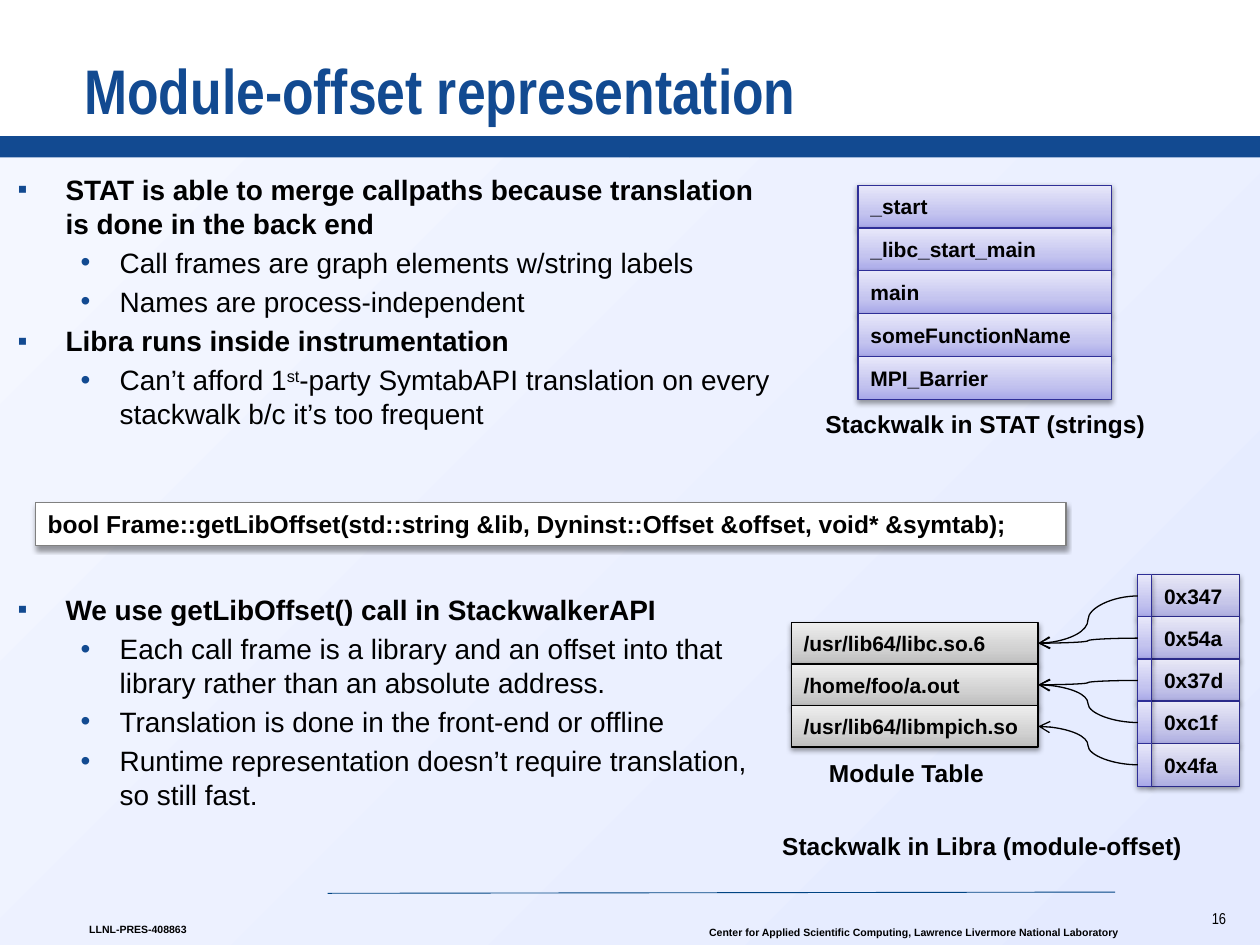
from lxml import etree
from pptx import Presentation
from pptx import util as u
from pptx.dml.color import RGBColor
from pptx.enum import shapes, text
from pptx.oxml import parse_xml
from pptx.oxml.ns import nsdecls, qn

THEME = {
    "font": "Arial", "title_font": "Arial Narrow",
    "blue": "124A91", "rule": "004483", "black": "000000",
    "white": "FFFFFF", "grey": "808080",
    "title": 36, "body": 16, "caption": 14, "cell": 12, "number": 9, "footer": 6,
    "background": [(0, "F4F7FF"), (100, "E4EAFF")],
    "violet": [(0, "A9A9E9"), (35, "C4C4EF"), (100, "E8E8FA")],
    "violet_line": "2F2F98",
    "lilac": [(0, "ADADE1"), (35, "C6C6E9"), (100, "E9E9F7")],
    "lilac_line": "2A2A89",
    "silver": [(0, "BDBDBD"), (35, "D1D1D1"), (100, "EEEEEE")],
}

presentation = Presentation()
presentation.slide_width = u.Inches(10)
presentation.slide_height = u.Inches(7.5)
slide = presentation.slides.add_slide(presentation.slide_layouts[1])


def write(frame, content, size, bold=True, color=THEME["black"], font=THEME["font"],
          align=text.PP_ALIGN.LEFT, anchor=text.MSO_ANCHOR.TOP, wrap=True,
          bullet=None, level=0, margin=0, hanging=0, before=0, spacing=None):
    """Add one paragraph; parts between ^ marks are superscript."""
    frame.word_wrap = wrap
    frame.vertical_anchor = anchor
    paragraph = frame.add_paragraph() if frame.text else frame.paragraphs[0]
    paragraph.alignment = align
    paragraph.level = level
    if bullet:
        properties = paragraph._p.get_or_add_pPr()
        properties.set("marL", str(u.Inches(margin)))
        properties.set("indent", str(-u.Inches(hanging)))
        bullet_color = etree.SubElement(properties, qn("a:buClr"))
        etree.SubElement(bullet_color, qn("a:srgbClr"), val=THEME["blue"])
        etree.SubElement(properties, qn("a:buFont"), typeface=THEME["font"])
        etree.SubElement(properties, qn("a:buChar"), char=bullet)
    paragraph.space_before = u.Pt(before)
    if spacing:
        paragraph.line_spacing = spacing
    for index, part in enumerate(content.split("^")):
        run = paragraph.add_run()
        run.text = part
        run.font.size = u.Pt(size)
        run.font.bold = bold
        run.font.name = font
        run.font.color.rgb = RGBColor.from_string(color)
        if index % 2:
            run.font._element.set("baseline", "30000")


def add_box(left, top, width, height, fill, line=None, shadow=False, angle=270):
    """Add a rectangle; fill is a colour or a list of gradient stops."""
    shape = slide.shapes.add_shape(shapes.MSO_SHAPE.RECTANGLE, u.Inches(left),
                                   u.Inches(top), u.Inches(width), u.Inches(height))
    shape.shadow.inherit = False
    if isinstance(fill, str):
        shape.fill.solid()
        shape.fill.fore_color.rgb = RGBColor.from_string(fill)
    else:
        stops = "".join(f'<a:gs pos="{position * 1000}"><a:srgbClr val="{color}"/></a:gs>'
                        for position, color in fill)
        shape._element.spPr.find(qn("a:prstGeom")).addnext(parse_xml(
            f'<a:gradFill {nsdecls("a")} rotWithShape="1"><a:gsLst>{stops}</a:gsLst>'
            f'<a:lin ang="{angle * 60000}" scaled="0"/></a:gradFill>'))
    if line:
        shape.line.color.rgb = RGBColor.from_string(line)
        shape.line.width = u.Pt(0.75)
    else:
        shape.line.fill.background()
    if shadow:
        shape._element.spPr.find(qn("a:effectLst")).append(parse_xml(
            f'<a:outerShdw {nsdecls("a")} blurRad="39370" dist="20320" dir="5400000" '
            'rotWithShape="0"><a:srgbClr val="000000"><a:alpha val="38000"/>'
            '</a:srgbClr></a:outerShdw>'))
    return shape


# Background and header band
add_box(0, 1.17, 10, 6.33, THEME["background"], angle=45)
for left in (0, 5):
    add_box(left, 1.08, 5, 0.17, THEME["blue"])

# Footer rule
rule = slide.shapes.add_connector(shapes.MSO_CONNECTOR.STRAIGHT, u.Inches(2.6),
                                  u.Inches(7.09), u.Inches(8.85), u.Inches(7.08))
rule.line.color.rgb = RGBColor.from_string(THEME["rule"])
rule.line.width = u.Pt(0.5)
etree.SubElement(rule._element.spPr, qn("a:effectLst"))

# Title, in front of the background
title, body = slide.shapes.title, slide.placeholders[1]
for shape, (left, top, width, height) in ((title, (0.67, 0.17, 8.69, 0.89)),
                                          (body, (0.04, 1.32, 6.17, 5.7))):
    slide.shapes._spTree.append(shape._element)
    shape.left, shape.top = u.Inches(left), u.Inches(top)
    shape.width, shape.height = u.Inches(width), u.Inches(height)
    shape.text_frame.auto_size = text.MSO_AUTO_SIZE.NONE
title.text_frame.margin_left = 0
write(title.text_frame, "Module-offset representation", THEME["title"],
      color=THEME["blue"], font=THEME["title_font"], anchor=text.MSO_ANCHOR.BOTTOM)

# Body list: level, space before, text
points = [
    (0, 0, "STAT is able to merge callpaths because translation is done in the back end"),
    (1, 3.2, "Call frames are graph elements w/string labels"),
    (1, 3.2, "Names are process-independent"),
    (0, 3.2, "Libra runs inside instrumentation"),
    (1, 3.2, "Can’t afford 1^st^-party SymtabAPI translation on every stackwalk "
             "b/c it’s too frequent"),
    (0, 92.8, "We use getLibOffset() call in StackwalkerAPI"),
    (1, 3.2, "Each call frame is a library and an offset into that library rather than "
             "an absolute address."),
    (1, 3.2, "Translation is done in the front-end or offline"),
    (1, 3.2, "Runtime representation doesn’t require translation, so still fast."),
]
for level, before, content in points:
    write(body.text_frame, content, THEME["body"], bold=level == 0, level=level,
          bullet="▪•"[level], margin=(0.38, 0.81)[level], hanging=(0.38, 0.31)[level],
          before=before, spacing=u.Pt(19.2))

# Stacks of cells: left, first top, last top, width, height, fill, line, labels
stacks = {
    "strings": (6.81, 1.47, 2.83, 2.01, 0.34, THEME["violet"], THEME["violet_line"],
                ["_start", "_libc_start_main", "main", "someFunctionName", "MPI_Barrier"]),
    "modules": (6.28, 4.94, 5.6, 1.96, 0.33, THEME["silver"], THEME["black"],
                ["/usr/lib64/libc.so.6", "/home/foo/a.out", "/usr/lib64/libmpich.so"]),
    "offsets": (9.14, 4.56, 5.9, 0.7, 0.34, THEME["lilac"], THEME["lilac_line"],
                ["0x347", "0x54a", "0x37d", "0xc1f", "0x4fa"]),
    "pointers": (9.03, 4.56, 5.9, 0.11, 0.34, THEME["violet"], THEME["violet_line"],
                 [""] * 5),
}
cells = {}
for name, (left, first, last, width, height, fill, line, labels) in stacks.items():
    step = (last - first) / (len(labels) - 1)
    cells[name] = []
    for row, label in enumerate(labels):
        cell = add_box(left, first + row * step, width, height, fill, line, shadow=True)
        if label:
            write(cell.text_frame, label, THEME["cell"], anchor=text.MSO_ANCHOR.MIDDLE)
        cells[name].append(cell)

# Arrows from each pointer to its module
for pointer, module in zip(cells["pointers"], (0, 0, 1, 1, 2)):
    arrow = slide.shapes.add_connector(shapes.MSO_CONNECTOR.CURVE, 0, 0, 0, 0)
    target = cells["modules"][module]
    arrow.begin_x, arrow.begin_y = pointer.left, pointer.top + pointer.height // 2
    arrow.end_x, arrow.end_y = target.left + target.width, target.top + target.height // 2
    arrow.begin_connect(pointer, 1)
    arrow.end_connect(target, 3)
    arrow.line.color.rgb = RGBColor.from_string(THEME["black"])
    arrow.line.width = u.Pt(0.75)
    etree.SubElement(arrow.line._get_or_add_ln(), qn("a:tailEnd"), type="arrow")
    etree.SubElement(arrow._element.spPr, qn("a:effectLst"))

# Function signature
signature = add_box(0.28, 3.99, 8.18, 0.34, THEME["white"], THEME["grey"], shadow=True)
write(signature.text_frame,
      "bool Frame::getLibOffset(std::string &lib, Dyninst::Offset &offset, void* &symtab);",
      THEME["caption"], anchor=text.MSO_ANCHOR.MIDDLE)

# Captions and footer texts
labels = [
    (6.19, 3.2, 3.26, 0.34, "Stackwalk in STAT (strings)", THEME["caption"],
     {"align": text.PP_ALIGN.CENTER}),
    (6.11, 6.55, 3.4, 0.34, "Stackwalk in Libra (module-offset)", THEME["caption"],
     {"wrap": False}),
    (6.48, 5.97, 1.45, 0.34, "Module Table", THEME["caption"], {"wrap": False}),
    (0.61, 7.28, 0.99, 0.2, "LLNL-PRES-408863", THEME["footer"], {"wrap": False}),
    (5.53, 7.3, 3.48, 0.2, "Center for Applied Scientific Computing, "
     "Lawrence Livermore National Laboratory", THEME["footer"], {"wrap": False}),
    (9.49, 7.2, 0.34, 0.21, "16", THEME["number"],
     {"bold": False, "font": THEME["title_font"], "align": text.PP_ALIGN.RIGHT,
      "spacing": 0.75}),
]
for left, top, width, height, content, size, style in labels:
    label = slide.shapes.add_textbox(u.Inches(left), u.Inches(top),
                                     u.Inches(width), u.Inches(height))
    write(label.text_frame, content, size, **style)

presentation.save("out.pptx")
